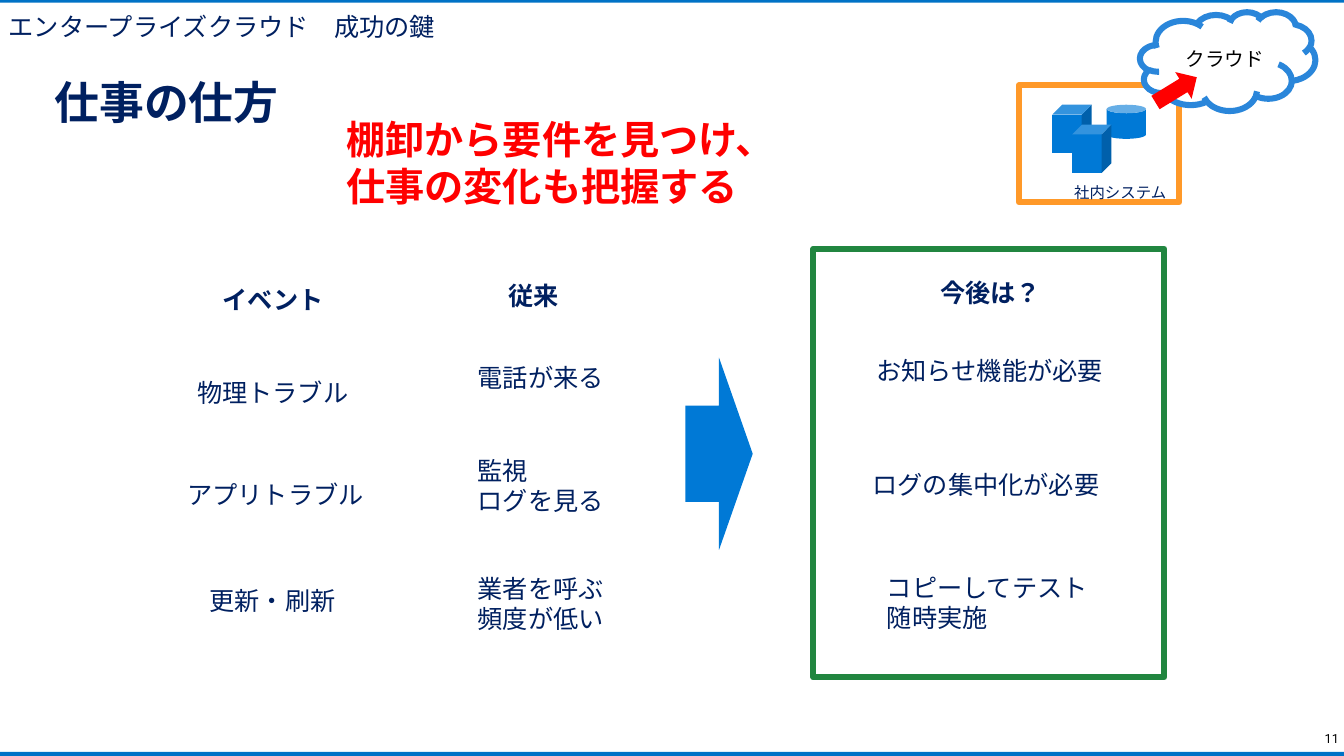
import dataclasses
import lxml.etree
import pptx
import pptx.dml.color
import pptx.enum.shapes
import pptx.enum.text
import pptx.oxml.ns
import pptx.util
from pptx.util import Cm

KIND = pptx.enum.shapes.MSO_SHAPE
ALIGN = pptx.enum.text.PP_ALIGN
ANCHOR = pptx.enum.text.MSO_ANCHOR
FIT = pptx.enum.text.MSO_AUTO_SIZE


@dataclasses.dataclass(frozen=True)
class Theme:
    navy: str = "002060"
    blue: str = "0079D6"
    rule: str = "0072C6"
    sky: str = "2A86DA"
    red: str = "FF0000"
    green: str = "218640"
    orange: str = "FF9929"
    white: str = "FFFFFF"
    black: str = "000000"
    font: str = "Roboto"
    cloud_font: str = "Noto Sans CJK JP"
    title: int = 32
    message: int = 28
    body: int = 18
    cloud: int = 14
    caption: int = 11
    number: int = 9
    outline: float = 4.33


THEME = Theme()


def rgb(value):
    return pptx.dml.color.RGBColor.from_string(value)


def apply(target, values):
    for name, value in values.items():
        setattr(target, name, value)


def write(shape, text, size, color=THEME.navy, bold=False, font=THEME.font,
          align=ALIGN.LEFT, **frame_format):
    frame = shape.text_frame
    apply(frame, frame_format)
    for index, line in enumerate(text.split("\n")):
        para = frame.add_paragraph() if index else frame.paragraphs[0]
        para.alignment = align
        span = para.add_run()
        span.text = line
        apply(span.font, {"size": pptx.util.Pt(size), "bold": bold, "name": font})
        span.font.color.rgb = rgb(color)
    for properties in list(shape.element.iter(pptx.oxml.ns.qn("a:rPr"))):
        properties.set("lang", "ja-JP")
        east_asian = lxml.etree.SubElement(properties, pptx.oxml.ns.qn("a:ea"))
        east_asian.set("typeface", font)


def place_label(page, left, top, text, size=THEME.body, shape=None, **style):
    lines = text.split("\n")
    em = size * 2.54 / 72
    width = Cm(0.51 + 1.01 * em * max(map(len, lines)))
    height = Cm(0.25 + 1.22 * em * len(lines))
    shape = shape or page.shapes.add_textbox(left, top, width, height)
    apply(shape, {"left": left, "top": top, "width": width, "height": height})
    write(shape, text, size, word_wrap=False, vertical_anchor=ANCHOR.TOP,
          auto_size=FIT.SHAPE_TO_FIT_TEXT, **style)


def place_shape(page, kind, left, top, width, height, fill, outline=None):
    shape = page.shapes.add_shape(kind, left, top, width, height)
    shape.shadow.inherit = False
    shape.fill.solid()
    shape.fill.fore_color.rgb = rgb(fill)
    if outline:
        shape.line.color.rgb = rgb(outline)
        shape.line.width = pptx.util.Pt(THEME.outline)
    else:
        shape.line.fill.background()
    return shape


def draw_page_frame(page, left, top, width, height):
    for edge in (top - Cm(0.03), top + height - Cm(0.1)):
        place_shape(page, KIND.RECTANGLE, left, edge, width, Cm(0.1), THEME.rule)
    number = page.shapes.add_textbox(left + width - Cm(1.73), top + height - Cm(0.76),
                                     Cm(1.85), Cm(0.64))
    write(number, "11", THEME.number, THEME.black, align=ALIGN.RIGHT,
          word_wrap=True, vertical_anchor=ANCHOR.MIDDLE)


def draw_heading(page, left, top):
    place_label(page, left - Cm(0.03), top + Cm(0.15), "エンタープライズクラウド　成功の鍵")
    place_label(page, left + Cm(1.12), top + Cm(1.75), "仕事の仕方", THEME.title,
                shape=page.shapes.title, bold=True)
    place_label(page, left + Cm(8.48), top + Cm(2.79),
                "棚卸から要件を見つけ、\n仕事の変化も把握する",
                THEME.message, color=THEME.red, bold=True)


def draw_system_diagram(page, left, top):
    place_shape(page, KIND.RECTANGLE, left, top + Cm(1.85), Cm(4.04), Cm(2.95),
                THEME.white, THEME.orange)
    place_shape(page, KIND.CAN, left + Cm(2.21), top + Cm(2.34), Cm(0.99), Cm(0.86),
                THEME.blue)
    for step in range(2):
        shift = Cm(0.5) * step
        place_shape(page, KIND.CUBE, left + Cm(0.84) + shift, top + Cm(2.34) + shift,
                    Cm(0.99), Cm(1.22), THEME.blue)
    place_label(page, left + Cm(1.14), top + Cm(4.19), "社内システム", THEME.caption)
    cloud = place_shape(page, KIND.CLOUD, left + Cm(3.05), top, Cm(4.42), Cm(2.49),
                        THEME.white, THEME.sky)
    write(cloud, "クラウド", THEME.cloud, THEME.black, font=THEME.cloud_font,
          align=ALIGN.CENTER, vertical_anchor=ANCHOR.MIDDLE, margin_left=Cm(0.3),
          margin_right=Cm(0.13), margin_top=Cm(0.13), margin_bottom=Cm(0.13))
    arrow = place_shape(page, KIND.RIGHT_ARROW, left + Cm(3.35), top + Cm(1.57),
                        Cm(1.22), Cm(0.79), THEME.red)
    arrow.rotation = 328.5


def draw_comparison(page, left, top):
    place_shape(page, KIND.RECTANGLE, left + Cm(16.03), top, Cm(8.84), Cm(10.8),
                THEME.white, THEME.green)
    columns = (
        ((0.89, 0.76, "イベント"), (0.25, 3.1, "物理トラブル"),
         (0, 5.69, "アプリトラブル"), (0.56, 8.36, "更新・刷新")),
        ((8.1, 0.66, "従来"), (7.32, 2.74, "電話が来る"),
         (7.32, 5.08, "監視\nログを見る"), (7.32, 8.05, "業者を呼ぶ\n頻度が低い")),
        ((18.97, 0.58, "今後は？"), (17.37, 2.57, "お知らせ機能が必要"),
         (17.27, 5.44, "ログの集中化が必要"), (17.63, 8.03, "コピーしてテスト\n随時実施")),
    )
    for column in columns:
        for row, (across, down, text) in enumerate(column):
            place_label(page, left + Cm(across), top + Cm(down), text, bold=row == 0)
    place_shape(page, KIND.RIGHT_ARROW, left + Cm(12.8), top + Cm(2.74),
                Cm(1.7), Cm(4.85), THEME.blue)


def main():
    deck = pptx.Presentation()
    apply(deck, {"slide_width": Cm(33.87), "slide_height": Cm(19.05)})
    page = deck.slides.add_slide(deck.slide_layouts[5])
    draw_page_frame(page, Cm(0), Cm(0), deck.slide_width, deck.slide_height)
    draw_heading(page, Cm(0), Cm(0))
    draw_system_diagram(page, Cm(25.68), Cm(0.3))
    draw_comparison(page, Cm(4.47), Cm(6.27))
    deck.save("out.pptx")


if __name__ == "__main__":
    main()
